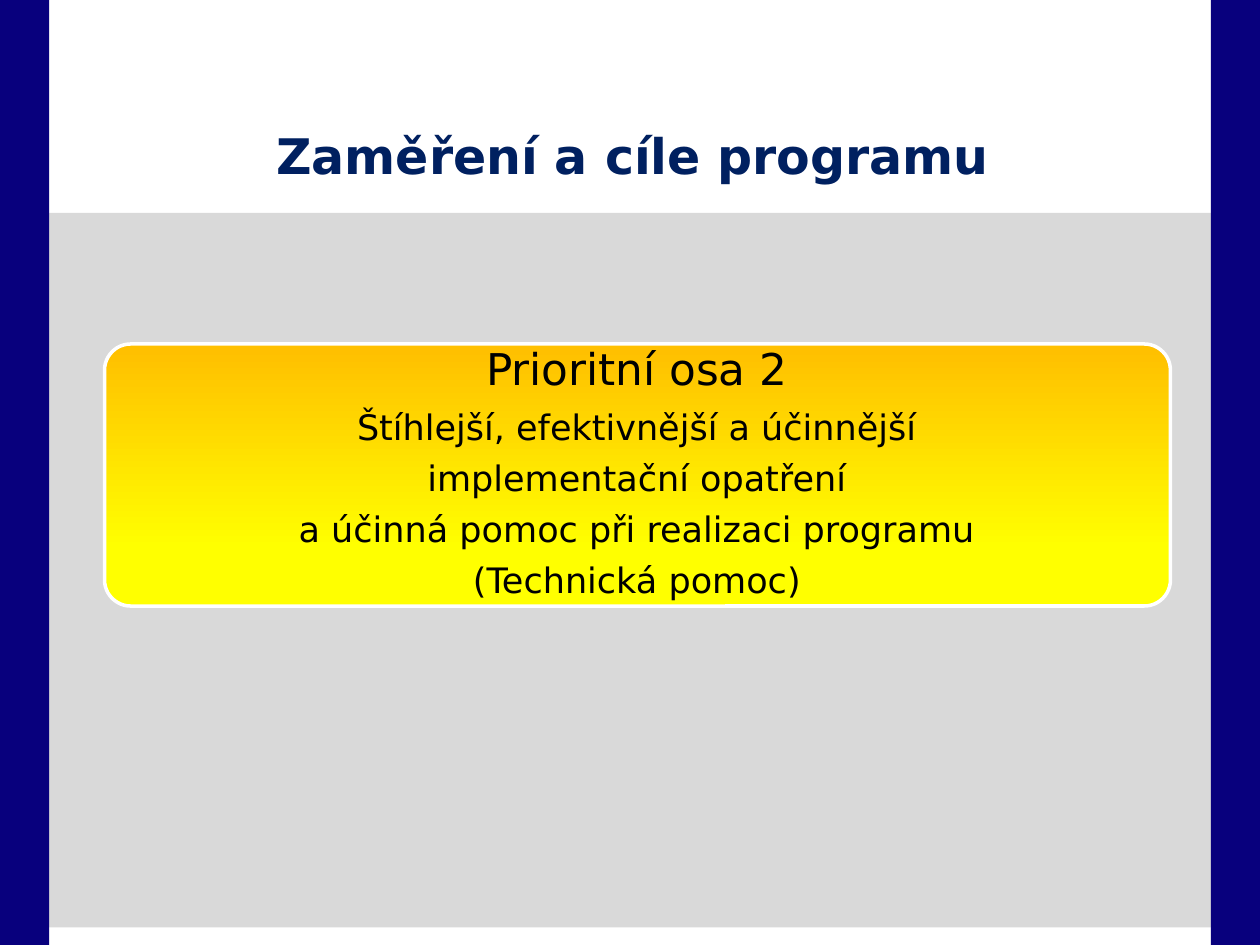
from pptx import Presentation
from pptx.dml.color import RGBColor
from pptx.enum.shapes import MSO_SHAPE
from pptx.enum.text import MSO_ANCHOR, PP_ALIGN
from pptx.util import Inches, Pt

RECT, ROUNDED = MSO_SHAPE.RECTANGLE, MSO_SHAPE.ROUNDED_RECTANGLE
TOP, MIDDLE = MSO_ANCHOR.TOP, MSO_ANCHOR.MIDDLE
CENTER = PP_ALIGN.CENTER

NAVY = RGBColor(0x08, 0x00, 0x7D)
TITLE_BLUE = RGBColor(0x00, 0x20, 0x60)
GRAY = RGBColor(0xD9, 0xD9, 0xD9)
AMBER = RGBColor(0xFF, 0xC0, 0x00)
YELLOW = RGBColor(0xFF, 0xFF, 0x00)
WHITE = RGBColor(0xFF, 0xFF, 0xFF)
BLACK = RGBColor(0x00, 0x00, 0x00)
FONT = "DejaVu Sans"

WIDTH, HEIGHT, BAR = 10, 7.5, 0.39
BACKDROP = [
    ((0, 1.69, WIDTH, 5.67), GRAY),
    ((WIDTH - BAR, 0, BAR, HEIGHT), NAVY),
    ((0, 0, BAR, HEIGHT), NAVY),
]
STOPS = [(0.02, AMBER), (0.78, YELLOW)]

TITLE_FONT = {"size": Pt(28), "bold": True, "color": TITLE_BLUE}
HEAD_FONT = {"size": Pt(25), "color": BLACK}
BODY_FONT = {"size": Pt(20), "color": BLACK}
HEAD_SPACING = {"line_spacing": 0.9, "space_after": Pt(9)}
BODY_SPACING = {"line_spacing": 0.9, "space_after": Pt(7.6)}

TITLE = [("Zaměření a cíle programu", TITLE_FONT, {})]
AXIS = [("Prioritní osa 2", HEAD_FONT, HEAD_SPACING)] + [
    (line, BODY_FONT, BODY_SPACING)
    for line in (
        "Štíhlejší, efektivnější a účinnější",
        "implementační opatření",
        "a účinná pomoc při realizaci programu",
        "(Technická pomoc)",
    )
]


def add_shape(s, kind, box):
    sp = s.shapes.add_shape(kind, *map(Inches, box))
    sp.shadow.inherit = False
    return sp


def add_text(s, box, paragraphs, anchor, inset):
    tf = s.shapes.add_textbox(*map(Inches, box)).text_frame
    tf.word_wrap = True
    tf.vertical_anchor = anchor
    for side in ("left", "top", "right", "bottom"):
        setattr(tf, f"margin_{side}", Inches(inset))
    for i, (text, font, spacing) in enumerate(paragraphs):
        p = tf.add_paragraph() if i else tf.paragraphs[0]
        p.alignment = CENTER
        for name, value in spacing.items():
            setattr(p, name, value)
        r = p.add_run()
        r.text = text
        r.font.name = FONT
        for name, value in font.items():
            if name == "color":
                r.font.color.rgb = value
            else:
                setattr(r.font, name, value)


def add_axis_panel(s, box):
    sp = add_shape(s, ROUNDED, box)
    sp.adjustments[0] = 0.1
    sp.fill.gradient()
    sp.fill.gradient_angle = 270
    for stop, (position, color) in zip(sp.fill.gradient_stops, STOPS):
        stop.position = position
        stop.color.rgb = color
    sp.line.color.rgb = WHITE
    sp.line.width = Pt(2)


def main():
    prs = Presentation()
    prs.slide_width, prs.slide_height = Inches(WIDTH), Inches(HEIGHT)
    s = prs.slides.add_slide(prs.slide_layouts[6])
    for box, color in BACKDROP:
        sp = add_shape(s, RECT, box)
        sp.fill.solid()
        sp.fill.fore_color.rgb = color
        sp.line.fill.background()
    add_text(s, (0.79, 1, 8.46, 0.7), TITLE, TOP, 0)
    add_axis_panel(s, (0.83, 2.73, 8.46, 2.08))
    add_text(s, (0.89, 2.79, 8.33, 1.95), AXIS, MIDDLE, 0.1)
    prs.save("out.pptx")


if __name__ == "__main__":
    main()
